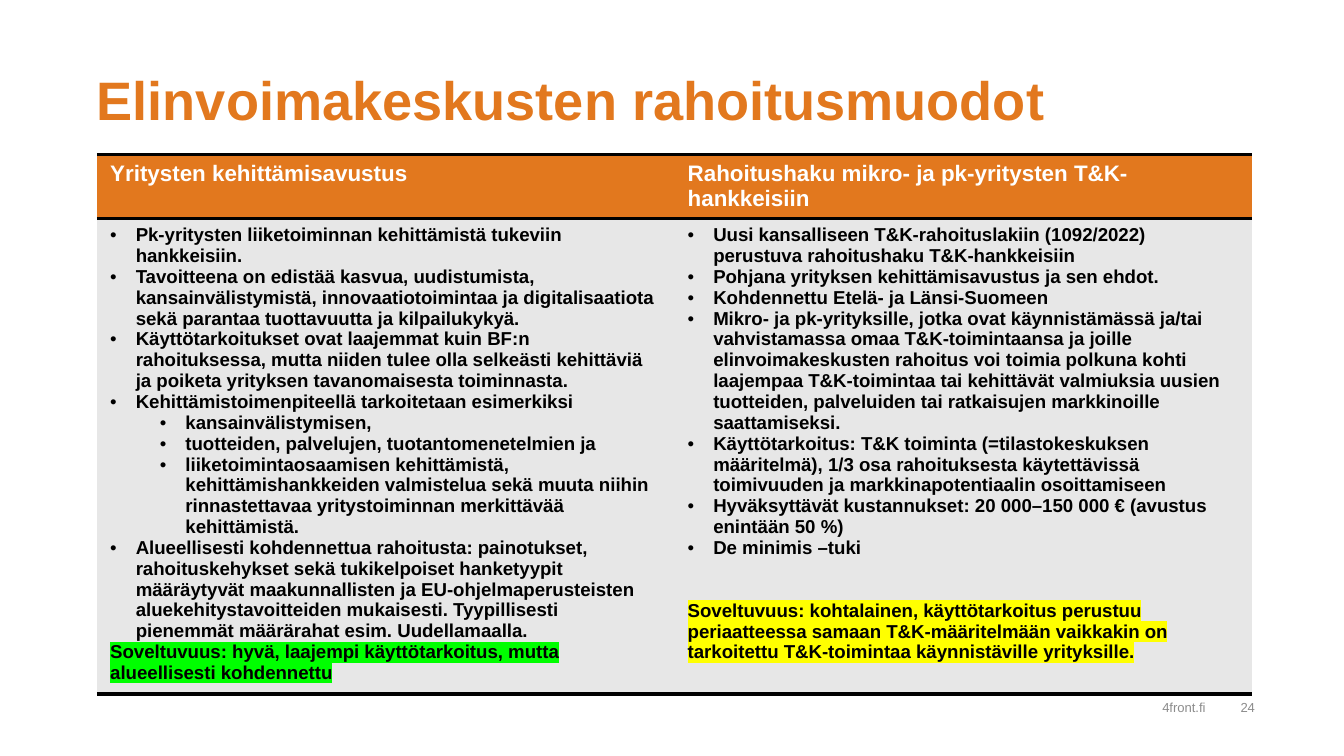
from lxml.etree import SubElement
from pptx import Presentation
from pptx.dml.color import RGBColor
from pptx.enum.text import MSO_ANCHOR, PP_ALIGN
from pptx.oxml.ns import qn
from pptx.util import Inches, Pt


def hue(code):
    return RGBColor.from_string(code)


def style(para, size, code, bold=False):
    for run in para.runs:
        run.font.name = "Arial"
        run.font.size = Pt(size)
        run.font.bold = bold
        run.font.color.rgb = hue(code)


deck = Presentation()
deck.slide_width = Inches(10)
deck.slide_height = deck.slide_width * 9 // 16
slide = deck.slides.add_slide(deck.slide_layouts[6])
col = deck.slide_width / 100
row = deck.slide_height / 100

ORANGE, GREY, BLACK = "E2781E", "E7E7E7", "000000"
LEFT, WIDE = 7.2, 85.94

heads = ["Yritysten kehittämisavustus",
         "Rahoitushaku mikro- ja pk-yritysten T&K-hankkeisiin"]
points = [
    [
        (0, "Pk-yritysten liiketoiminnan kehittämistä tukeviin hankkeisiin."),
        (0, "Tavoitteena on edistää kasvua, uudistumista, kansainvälistymistä, "
            "innovaatiotoimintaa ja digitalisaatiota sekä parantaa tuottavuutta ja kilpailukykyä."),
        (0, "Käyttötarkoitukset ovat laajemmat kuin BF:n rahoituksessa, mutta niiden tulee olla "
            "selkeästi kehittäviä ja poiketa yrityksen tavanomaisesta toiminnasta."),
        (0, "Kehittämistoimenpiteellä tarkoitetaan esimerkiksi"),
        (1, "kansainvälistymisen,"),
        (1, "tuotteiden, palvelujen, tuotantomenetelmien ja"),
        (1, "liiketoimintaosaamisen kehittämistä, kehittämishankkeiden valmistelua sekä muuta "
            "niihin rinnastettavaa yritystoiminnan merkittävää kehittämistä."),
        (0, "Alueellisesti kohdennettua rahoitusta: painotukset, rahoituskehykset sekä "
            "tukikelpoiset hanketyypit määräytyvät maakunnallisten ja EU-ohjelmaperusteisten "
            "aluekehitystavoitteiden mukaisesti. Tyypillisesti pienemmät määrärahat esim. "
            "Uudellamaalla."),
    ],
    [
        (0, "Uusi kansalliseen T&K-rahoituslakiin (1092/2022) perustuva rahoitushaku "
            "T&K-hankkeisiin"),
        (0, "Pohjana yrityksen kehittämisavustus ja sen ehdot."),
        (0, "Kohdennettu Etelä- ja Länsi-Suomeen"),
        (0, "Mikro- ja pk-yrityksille, jotka ovat käynnistämässä ja/tai vahvistamassa omaa "
            "T&K-toimintaansa ja joille elinvoimakeskusten rahoitus voi toimia polkuna kohti "
            "laajempaa T&K-toimintaa tai kehittävät valmiuksia uusien tuotteiden, palveluiden "
            "tai ratkaisujen markkinoille saattamiseksi."),
        (0, "Käyttötarkoitus: T&K toiminta (=tilastokeskuksen määritelmä), 1/3 osa "
            "rahoituksesta käytettävissä toimivuuden ja markkinapotentiaalin osoittamiseen"),
        (0, "Hyväksyttävät kustannukset: 20 000–150 000 € (avustus enintään 50 %)"),
        (0, "De minimis –tuki"),
    ],
]
sums = [
    ("Soveltuvuus: hyvä, laajempi käyttötarkoitus, mutta alueellisesti kohdennettu",
     "00FF00", 0),
    ("Soveltuvuus: kohtalainen, käyttötarkoitus perustuu periaatteessa samaan "
     "T&K-määritelmään vaikkakin on tarkoitettu T&K-toimintaa käynnistäville yrityksille.",
     "FFFF00", 22.5),
]

frame = slide.shapes.add_table(2, 2, int(LEFT * col), int(20.44 * row),
                               int(WIDE * col), int(71.29 * row))
table = frame.table
table.first_row = True
table.horz_banding = False
table._tbl.tblPr[0].text = "{2D5ABB26-0587-4C30-8999-92F81FD0307C}"
for line, tall, fill in zip(table.rows, (8.36, 62.93), (ORANGE, GREY)):
    line.height = int(tall * row)
    for cell in line.cells:
        for side in ("lnT", "lnB"):
            edge = SubElement(cell._tc.get_or_add_tcPr(), qn(f"a:{side}"), w=str(Pt(2)))
            paint = SubElement(edge, qn("a:solidFill"))
            SubElement(paint, qn("a:srgbClr"), val=BLACK)
        cell.fill.solid()
        cell.fill.fore_color.rgb = hue(fill)

for c, (head, items, (note, mark, gap)) in enumerate(zip(heads, points, sums)):
    table.cell(0, c).text_frame.text = head
    style(table.cell(0, c).text_frame.paragraphs[0], 12, "FFFFFF", True)

    body = table.cell(1, c).text_frame
    body.text = "\n".join([text for _, text in items] + [note])
    for para, (level, _) in zip(body.paragraphs, items):
        para.level = level
        props = para._p.get_or_add_pPr()
        props.set("marL", str(Inches(0.19 + 0.37 * level)))
        props.set("indent", str(Inches(-0.19)))
        SubElement(props, qn("a:buFont"), typeface="Arial")
        SubElement(props, qn("a:buChar"), char="•")
    for para in body.paragraphs:
        style(para, 10, BLACK, True)

    last = body.paragraphs[-1]
    last.space_before = Pt(gap)
    props = last.runs[0].font._element
    glow = SubElement(props, qn("a:highlight"))
    SubElement(glow, qn("a:srgbClr"), val=mark)
    props.find(qn("a:solidFill")).addnext(glow)

for text, x, y, w, h, size, code, bold, side, hold, lead in [
    ("4front.fi", 55.9, 92.01, 33.8, 3.02, 7, "8C8C8C", False,
     PP_ALIGN.RIGHT, MSO_ANCHOR.MIDDLE, 1.0),
    ("24", 92.3, 92.01, 5.5, 3.02, 7, "8C8C8C", False,
     PP_ALIGN.LEFT, MSO_ANCHOR.MIDDLE, 1.0),
    ("Elinvoimakeskusten rahoitusmuodot", LEFT, 9.78, WIDE, 14.76, 29, ORANGE, True,
     PP_ALIGN.LEFT, MSO_ANCHOR.TOP, 0.9),
]:
    box = slide.shapes.add_textbox(int(x * col), int(y * row), int(w * col), int(h * row))
    pane = box.text_frame
    pane.word_wrap = True
    pane.margin_left = pane.margin_right = pane.margin_top = pane.margin_bottom = 0
    pane.vertical_anchor = hold
    pane.text = text
    para = pane.paragraphs[0]
    para.alignment = side
    para.line_spacing = lead
    style(para, size, code, bold)

deck.save("out.pptx")
